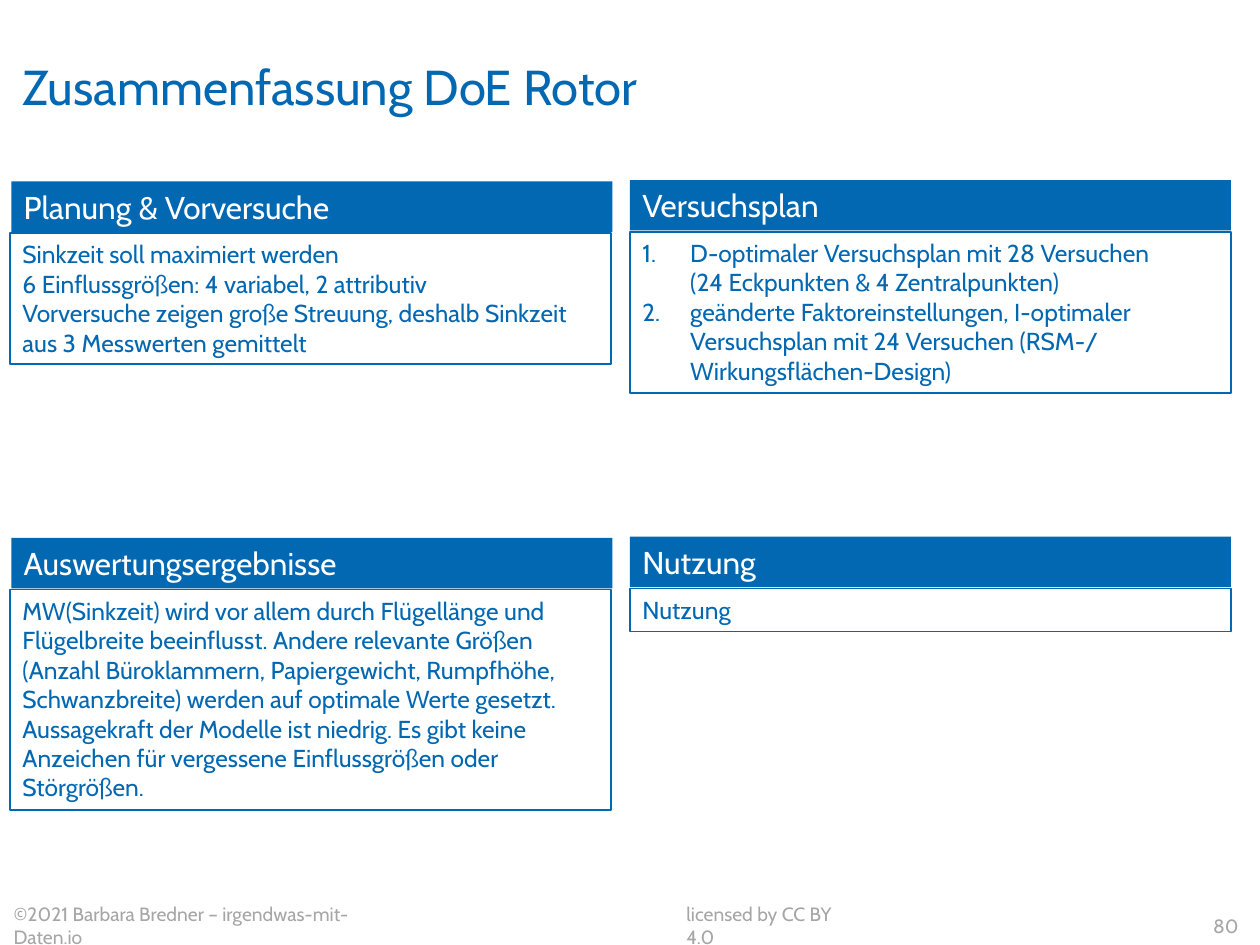
from lxml.etree import SubElement
from pptx import Presentation
from pptx.dml.color import RGBColor
from pptx.enum.shapes import MSO_SHAPE
from pptx.enum.text import MSO_ANCHOR, MSO_AUTO_SIZE, PP_ALIGN
from pptx.oxml.ns import qn
from pptx.util import Inches, Pt

# Content
TITLE = "Zusammenfassung DoE Rotor"
# Each panel: head, body lines, body height, numbered
PANELS = [
    ("Planung & Vorversuche", [
        "Sinkzeit soll maximiert werden",
        "6 Einflussgrößen: 4 variabel, 2 attributiv",
        "Vorversuche zeigen große Streuung, deshalb Sinkzeit aus 3 Messwerten gemittelt",
    ], 1.04, False),
    ("Versuchsplan", [
        "D-optimaler Versuchsplan mit 28 Versuchen\n(24 Eckpunkten & 4 Zentralpunkten)",
        "geänderte Faktoreinstellungen, I-optimaler Versuchsplan mit 24 Versuchen "
        "(RSM-/ Wirkungsflächen-Design)",
    ], 1.28, True),
    ("Auswertungsergebnisse", [
        "MW(Sinkzeit) wird vor allem durch Flügellänge und Flügelbreite beeinflusst. "
        "Andere relevante Größen (Anzahl Büroklammern, Papiergewicht, Rumpfhöhe, "
        "Schwanzbreite) werden auf optimale Werte gesetzt.",
        "Aussagekraft der Modelle ist niedrig. Es gibt keine Anzeichen für vergessene "
        "Einflussgrößen oder Störgrößen.",
    ], 1.75, False),
    ("Nutzung", ["Nutzung"], 0.34, False),
]
# Each footer: text, left, width, alignment
FOOTERS = [
    ("licensed by CC BY 4.0", 5.35, 1.56, PP_ALIGN.LEFT),
    ("©2021 Barbara Bredner – irgendwas-mit-Daten.io", 0.01, 3.2, PP_ALIGN.LEFT),
    ("80", 9.45, 0.48, PP_ALIGN.RIGHT),
]

# Formats and grid
BLUE, WHITE, GREY = "0368B2", "FFFFFF", "A6A6A6"
FACE = "Cabin"
STYLES = {
    "title": ({"name": FACE, "size": Pt(28), "bold": False}, BLUE),
    "head": ({"name": FACE, "size": Pt(18)}, WHITE),
    "body": ({"name": FACE, "size": Pt(14)}, BLUE),
    "foot": ({"name": FACE, "size": Pt(11)}, GREY),
}
# Each column: head left, body left, drop
COLS = [(0.09, 0.08, 0.01), (5, 5, 0)]
TOP, PITCH, WIDTH, BAR, STEP = 1.43, 2.83, 4.77, 0.4, 0.41
INDENT = 0.38


def color(code):
    return RGBColor.from_string(code)


def write(frame, lines, style, align=PP_ALIGN.LEFT, listed=False, **format):
    for name, value in format.items():
        setattr(frame, name, value)
    values, code = STYLES[style]
    for i, line in enumerate(lines):
        par = frame.paragraphs[0] if i == 0 else frame.add_paragraph()
        par.text = line
        par.alignment = align
        if listed:
            number(par)
        for run in par.runs:
            for name, value in values.items():
                setattr(run.font, name, value)
            run.font.color.rgb = color(code)


def number(par):
    props = par._p.get_or_add_pPr()
    props.set("marL", str(Inches(INDENT)))
    props.set("indent", str(-Inches(INDENT)))
    SubElement(props, qn("a:buFont"), typeface="+mj-lt")
    SubElement(props, qn("a:buAutoNum"), type="arabicPeriod")


def box(slide, *place):
    shape = slide.shapes.add_shape(MSO_SHAPE.RECTANGLE, *map(Inches, place))
    shape.shadow.inherit = False
    return shape


def panel(slide, index, head, lines, height, listed):
    row, col = divmod(index, len(COLS))
    left, inner, drop = COLS[col]
    top = TOP + row * PITCH + drop
    fit = {"word_wrap": True, "vertical_anchor": MSO_ANCHOR.TOP,
           "auto_size": MSO_AUTO_SIZE.SHAPE_TO_FIT_TEXT}

    bar = box(slide, left, top, WIDTH, BAR)
    bar.fill.solid()
    bar.fill.fore_color.rgb = color(BLUE)
    bar.line.fill.background()
    write(bar.text_frame, [head], "head", **fit)

    body = box(slide, inner, top + STEP, WIDTH, height)
    body.fill.background()
    body.line.color.rgb = color(BLUE)
    body.line.width = Pt(0.75)
    write(body.text_frame, lines, "body", listed=listed, **fit)


def main():
    deck = Presentation()
    deck.slide_width, deck.slide_height = Inches(10), Inches(7.5)
    slide = deck.slides.add_slide(deck.slide_layouts[5])

    # Title
    title = slide.shapes.title
    place = {"left": 0.08, "top": 0.09, "width": 9.84, "height": 1.18}
    for name, value in place.items():
        setattr(title, name, Inches(value))
    write(title.text_frame, [TITLE], "title", vertical_anchor=MSO_ANCHOR.MIDDLE)

    # Footer
    for text, left, width, align in FOOTERS:
        foot = slide.shapes.add_textbox(*map(Inches, (left, 7.2, width, 0.29)))
        write(foot.text_frame, [text], "foot", align, word_wrap=False,
              vertical_anchor=MSO_ANCHOR.MIDDLE,
              auto_size=MSO_AUTO_SIZE.SHAPE_TO_FIT_TEXT)

    # Panels
    for index, parts in enumerate(PANELS):
        panel(slide, index, *parts)

    deck.save("out.pptx")


if __name__ == "__main__":
    main()
